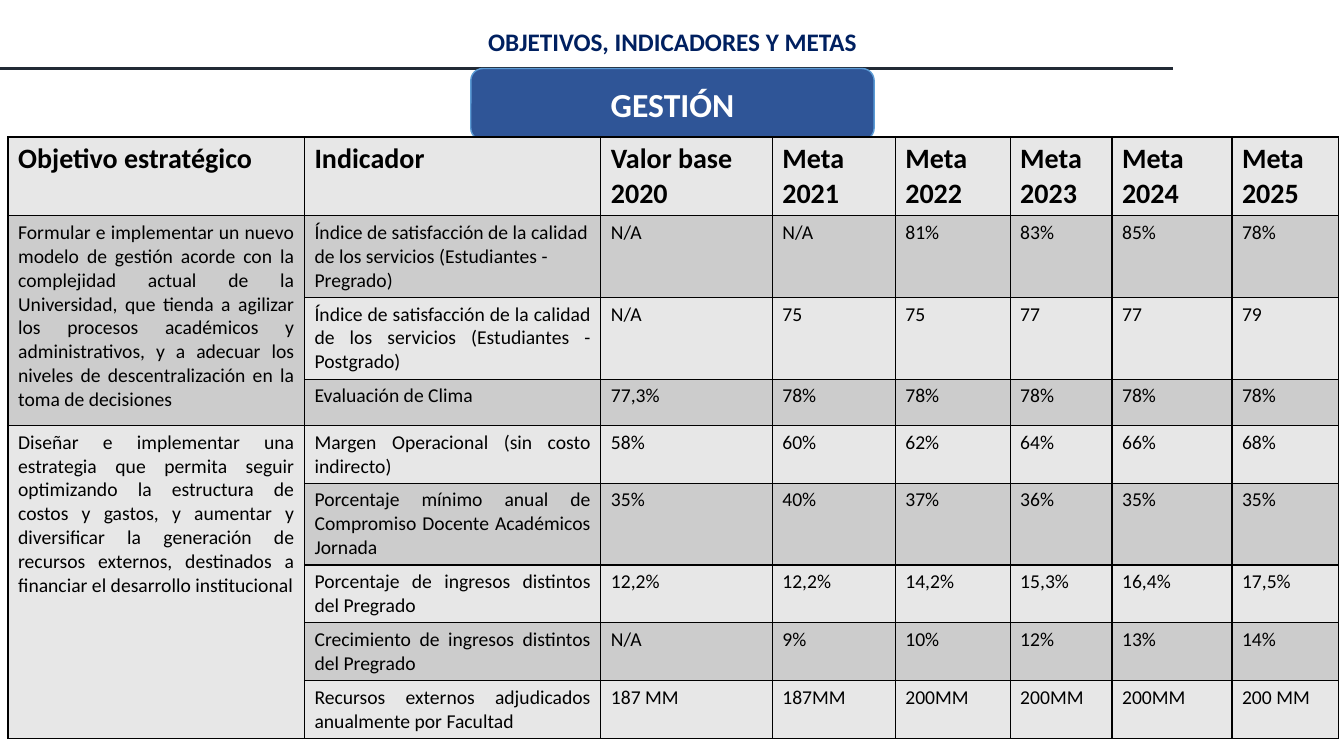
"""Build the slide of management goals, indicators and targets."""
from dataclasses import dataclass

from lxml.etree import SubElement
from pptx import Presentation
from pptx.dml.color import RGBColor as Rgb
from pptx.enum.shapes import MSO_CONNECTOR as Conn, MSO_SHAPE as Form
from pptx.enum.text import MSO_ANCHOR as Anchor, PP_ALIGN as Align
from pptx.oxml.ns import qn
from pptx.util import Inches, Pt

LIGHT, DARK = "E7E7E7", "CCCCCC"
HEAD = ["Objetivo estratégico", "Indicador", "Valor base 2020"]
HEAD += [f"Meta {year}" for year in range(2021, 2026)]
COLS = [2.94, 2.94, 1.7, 1.22, 1.14, 1.01, 1.19, 1.06]


@dataclass
class Metric:
    name: str
    vals: str
    high: float
    align: Align = Align.JUSTIFY


@dataclass
class Goal:
    text: str
    items: list[Metric]


GOALS = [
    Goal("Formular e implementar un nuevo modelo de gestión acorde con la "
         "complejidad actual de la Universidad, que tienda a agilizar los "
         "procesos académicos y administrativos, y a adecuar los niveles de "
         "descentralización en la toma de decisiones", [
             Metric("Índice de satisfacción de la calidad de los servicios "
                    "(Estudiantes - Pregrado)",
                    "N/A|N/A|81%|83%|85%|78%", 0.77, Align.LEFT),
             Metric("Índice de satisfacción de la calidad de los servicios "
                    "(Estudiantes - Postgrado)", "N/A|75|75|77|77|79", 0.77),
             Metric("Evaluación de Clima",
                    "77,3%|78%|78%|78%|78%|78%", 0.46)]),
    Goal("Diseñar e implementar una estrategia que permita seguir "
         "optimizando la estructura de costos y gastos, y aumentar y "
         "diversificar la generación de recursos externos, destinados a "
         "financiar el desarrollo institucional", [
             Metric("Margen Operacional (sin costo indirecto)",
                    "58%|60%|62%|64%|66%|68%", 0.55),
             Metric("Porcentaje mínimo anual de Compromiso Docente "
                    "Académicos Jornada", "35%|40%|37%|36%|35%|35%", 0.77),
             Metric("Porcentaje de ingresos distintos del Pregrado",
                    "12,2%|12,2%|14,2%|15,3%|16,4%|17,5%", 0.55),
             Metric("Crecimiento de ingresos distintos del Pregrado",
                    "N/A|9%|10%|12%|13%|14%", 0.55),
             Metric("Recursos externos adjudicados anualmente por Facultad",
                    "187 MM|187MM|200MM|200MM|200MM|200 MM", 0.55)]),
]


def paint(fill, color: str) -> None:
    fill.solid()
    fill.fore_color.rgb = Rgb.from_string(color)


def write(frame, text: str, size: int, color: str = "000000",
          bold: bool = False, align: Align = Align.LEFT) -> None:
    frame.text = text
    para = frame.paragraphs[0]
    para.alignment = align
    font = para.font
    font.name, font.size, font.bold = "Calibri", Pt(size), bold
    font.color.rgb = Rgb.from_string(color)


def edge(cell) -> None:
    props = cell._tc.get_or_add_tcPr()
    for spot, side in enumerate(("lnL", "lnR", "lnT", "lnB")):
        line = props.makeelement(qn(f"a:{side}"), {"w": str(Pt(1))})
        solid = SubElement(line, qn("a:solidFill"))
        SubElement(solid, qn("a:srgbClr"), val="000000")
        props.insert(spot, line)


def add_title(slide) -> None:
    title = slide.shapes.title
    title.left, title.top = Inches(2.59), Inches(0.21)
    title.width, title.height = Inches(8.16), Inches(0.4)
    paint(title.fill, "FFFFFF")
    write(title.text_frame, "OBJETIVOS, INDICADORES Y METAS", 18, "002060",
          True, Align.CENTER)
    title.text_frame.vertical_anchor = Anchor.TOP
    title.text_frame.paragraphs[0].line_spacing = 1.0


def add_rule(slide) -> None:
    rule = slide.shapes.add_connector(
        Conn.STRAIGHT, Inches(11.63), Inches(0.68), Inches(-0.02), Inches(0.68))
    rule.line.width = Pt(2)
    paint(rule.line.fill, "222A35")
    SubElement(rule._element.spPr, qn("a:effectLst"))


def add_badge(slide) -> None:
    badge = slide.shapes.add_shape(
        Form.ROUNDED_RECTANGLE, Inches(4.67), Inches(0.68), Inches(4), Inches(0.71))
    badge.shadow.inherit = False
    paint(badge.fill, "2F5597")
    paint(badge.line.fill, "5B9BD5")
    badge.line.width = Pt(1)
    write(badge.text_frame, "GESTIÓN", 24, "FFFFFF", True, Align.CENTER)
    badge.text_frame.vertical_anchor = Anchor.MIDDLE


def add_grid(slide) -> None:
    highs = [0.42] + [item.high for goal in GOALS for item in goal.items]
    table = slide.shapes.add_table(
        len(highs), len(COLS), Inches(0.08), Inches(1.36),
        Inches(sum(COLS)), Inches(sum(highs))).table
    for col, wide in zip(table.columns, COLS):
        col.width = Inches(wide)
    for num, (row, high) in enumerate(zip(table.rows, highs)):
        row.height = Inches(high)
        for cell in row.cells:
            paint(cell.fill, DARK if num % 2 else LIGHT)
            edge(cell)
    for col, text in enumerate(HEAD):
        write(table.cell(0, col).text_frame, text, 20, bold=True)
    top = 1
    for goal in GOALS:
        first = table.cell(top, 0)
        first.merge(table.cell(top + len(goal.items) - 1, 0))
        write(first.text_frame, goal.text, 14, align=Align.JUSTIFY)
        for num, item in enumerate(goal.items, top):
            write(table.cell(num, 1).text_frame, item.name, 14, align=item.align)
            for col, val in enumerate(item.vals.split("|"), 2):
                write(table.cell(num, col).text_frame, val, 14)
        top += len(goal.items)


def main() -> None:
    deck = Presentation()
    deck.slide_width, deck.slide_height = Inches(13.33), Inches(7.5)
    slide = deck.slides.add_slide(deck.slide_layouts[5])
    for draw in (add_title, add_rule, add_badge, add_grid):
        draw(slide)
    deck.save("out.pptx")


if __name__ == "__main__":
    main()
